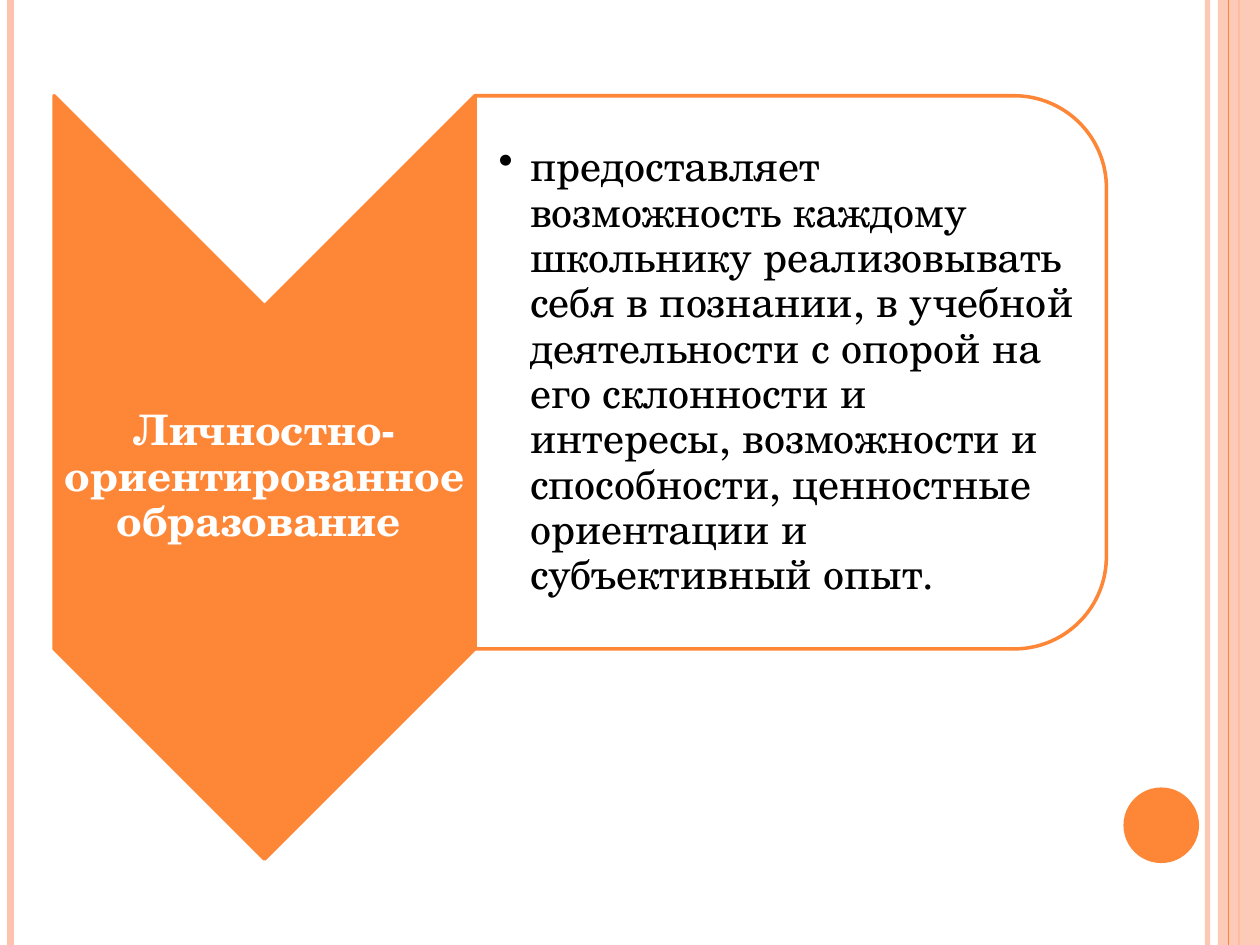
import pptx
import pptx.dml.color
import pptx.enum.shapes
import pptx.enum.text
import pptx.oxml.ns
import pptx.util
from lxml import etree

Pt = pptx.util.Pt
SHAPES = pptx.enum.shapes.MSO_SHAPE
ALIGN = pptx.enum.text.PP_ALIGN

ORANGE = pptx.dml.color.RGBColor(0xFE, 0x86, 0x37)
PEACH = pptx.dml.color.RGBColor(0xFE, 0xC3, 0xAE)
WHITE = pptx.dml.color.RGBColor(0xFF, 0xFF, 0xFF)
BLACK = pptx.dml.color.RGBColor(0, 0, 0)
FONT = "TeX Gyre Schola"
SLIDE_WIDTH, SLIDE_HEIGHT = 720, 540

HEADING = "Личностно-ориентированное образование "
DESCRIPTION = (
    "предоставляет возможность каждому школьнику реализовывать себя в познании, "
    "в учебной деятельности с опорой на его склонности и интересы, возможности и "
    "способности, ценностные ориентации и субъективный опыт."
)


def set_opacity(element, percent):
    """Make the solid colour inside an element partly transparent."""
    color = element.find(".//" + pptx.oxml.ns.qn("a:srgbClr"))
    alpha = etree.SubElement(color, pptx.oxml.ns.qn("a:alpha"))
    alpha.set("val", str(percent * 1000))


def add_stripe(slide, x, color, width, opacity=100):
    """Draw a vertical line over the full slide height."""
    stripe = slide.shapes.add_connector(
        pptx.enum.shapes.MSO_CONNECTOR.STRAIGHT, Pt(x), Pt(0), Pt(x), Pt(SLIDE_HEIGHT)
    )
    stripe.line.color.rgb = color
    stripe.line.width = Pt(width)
    properties = stripe._element.spPr
    if opacity < 100:
        set_opacity(properties, opacity)
    etree.SubElement(properties, pptx.oxml.ns.qn("a:effectLst"))


def add_figure(slide, kind, box, fill, opacity=100, outline=None, rotation=0):
    """Draw a filled preset shape in a box of left, top, width and height."""
    shape = slide.shapes.add_shape(kind, *map(Pt, box))
    shape.shadow.inherit = False
    shape.rotation = rotation
    shape.fill.solid()
    shape.fill.fore_color.rgb = fill
    if opacity < 100:
        set_opacity(shape._element.spPr, opacity)
    if outline is None:
        shape.line.fill.background()
    else:
        shape.line.color.rgb = outline
        shape.line.width = Pt(2)


def add_text(slide, text, box, color, bold=False, align=ALIGN.LEFT, left_inset=1.5, bullet=None):
    """Place one vertically centred paragraph in a text box."""
    frame = slide.shapes.add_textbox(*map(Pt, box)).text_frame
    frame.word_wrap = True
    frame.vertical_anchor = pptx.enum.text.MSO_ANCHOR.MIDDLE
    frame.margin_left = Pt(left_inset)
    frame.margin_top = frame.margin_right = frame.margin_bottom = Pt(1.5)
    paragraph = frame.paragraphs[0]
    paragraph.alignment = align
    paragraph.line_spacing = 0.9
    if bullet:
        properties = paragraph._p.get_or_add_pPr()
        properties.set("marL", str(Pt(18)))
        properties.set("indent", str(Pt(-18)))
        etree.SubElement(properties, pptx.oxml.ns.qn("a:buChar")).set("char", bullet)
    run = paragraph.add_run()
    run.text = text
    run.font.name = FONT
    run.font.size = Pt(24)
    run.font.bold = bold
    run.font.color.rgb = color


def add_decoration(slide):
    """Draw the stripes at the slide edges and the corner disc."""
    add_stripe(slide, 690, PEACH, 3, opacity=93)
    add_stripe(slide, 6, PEACH, 4.5)
    add_stripe(slide, 708, ORANGE, 1.5)
    add_figure(slide, SHAPES.RECTANGLE, (696, 0, 24, SLIDE_HEIGHT), PEACH, opacity=87)
    add_stripe(slide, 702, ORANGE, 0.75)
    add_figure(slide, SHAPES.OVAL, (642, 450, 43.2, 43.2), ORANGE)


def add_diagram(slide):
    """Draw the downward chevron with its heading and the description card."""
    add_figure(slide, SHAPES.CHEVRON, (-67, 152.6, 436.3, 240.5), ORANGE,
               outline=ORANGE, rotation=90)
    add_text(slide, HEADING, (31, 175, 240.5, 195.8), WHITE, bold=True, align=ALIGN.CENTER)
    add_figure(slide, SHAPES.ROUND_2_SAME_RECTANGLE, (293.8, 32.4, 316.1, 360.7), WHITE,
               opacity=90, outline=ORANGE, rotation=90)
    add_text(slide, DESCRIPTION, (271.4, 69.8, 344.9, 285.8), BLACK,
             left_inset=13.5, bullet="•")


def main():
    """Build the slide and save it."""
    presentation = pptx.Presentation()
    presentation.slide_width = Pt(SLIDE_WIDTH)
    presentation.slide_height = Pt(SLIDE_HEIGHT)
    slide = presentation.slides.add_slide(presentation.slide_layouts[6])
    add_decoration(slide)
    add_diagram(slide)
    presentation.save("out.pptx")


if __name__ == "__main__":
    main()
